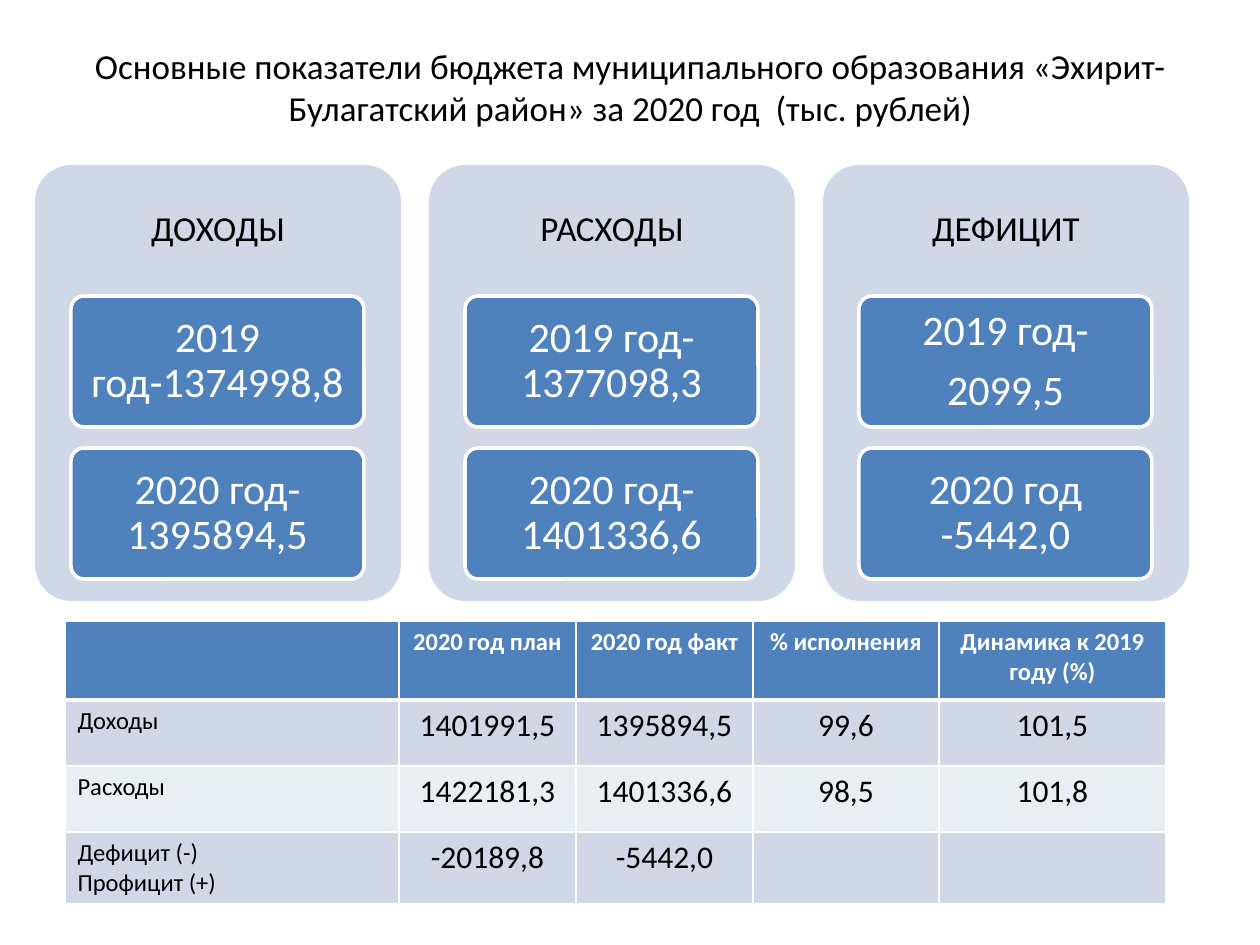
import pptx
import pptx.util
from lxml import etree
from pptx.dml.color import RGBColor
from pptx.enum.shapes import MSO_SHAPE
from pptx.enum.text import MSO_ANCHOR, PP_ALIGN
from pptx.oxml.ns import qn

PX = 914400 / 126
FONT = "Calibri"
BLACK = RGBColor(0x00, 0x00, 0x00)
WHITE = RGBColor(0xFF, 0xFF, 0xFF)
BLUE = RGBColor(0x4F, 0x81, 0xBD)
PALE = RGBColor(0xD0, 0xD8, 0xE8)
PALER = RGBColor(0xE9, 0xED, 0xF4)

TITLE = ("Основные показатели бюджета муниципального образования "
         "«Эхирит-Булагатский район» за 2020 год  (тыс. рублей)")
PANELS = [
    ("ДОХОДЫ", [["2019 год-1374998,8"], ["2020 год- 1395894,5"]]),
    ("РАСХОДЫ", [["2019 год- 1377098,3"], ["2020 год- 1401336,6"]]),
    ("ДЕФИЦИТ", [["2019 год-", "2099,5"], ["2020 год -5442,0"]]),
]
COLUMNS = [334, 177, 177, 186, 227]
ROWS = [79, 66, 66, 72]
TABLE = [
    ["", "2020 год план", "2020 год факт", "% исполнения",
     "Динамика к 2019 году (%)"],
    ["Доходы", "1401991,5", "1395894,5", "99,6", "101,5"],
    ["Расходы", "1422181,3", "1401336,6", "98,5", "101,8"],
    ["Дефицит (-)\nПрофицит (+)", "-20189,8", "-5442,0", "", ""],
]


def px(n):
    return pptx.util.Emu(round(n * PX))


def box(*lengths):
    return [px(n) for n in lengths]


def set_attrs(obj, values):
    for name, value in values.items():
        setattr(obj, name, value)


def write(tf, lines, size, color, align=PP_ALIGN.CENTER, bold=False, **spacing):
    tf.word_wrap = True
    for i, line in enumerate(lines):
        p = tf.paragraphs[0] if i == 0 else tf.add_paragraph()
        set_attrs(p, {"alignment": align, **spacing})
        r = p.add_run()
        r.text = line
        set_attrs(r.font, {"name": FONT, "size": pptx.util.Pt(size), "bold": bold})
        r.font.color.rgb = color


def write_centered(tf, lines, size, color, inset_x, inset_y):
    set_attrs(tf, {"vertical_anchor": MSO_ANCHOR.MIDDLE,
                   "margin_left": px(inset_x), "margin_right": px(inset_x),
                   "margin_top": px(inset_y), "margin_bottom": px(inset_y)})
    write(tf, lines, size, color, line_spacing=0.9,
          space_after=pptx.util.Pt(size * 0.35))


def add_title(s):
    title = s.shapes.title
    set_attrs(title, dict(zip(("left", "top", "width", "height"),
                              box(64, 38, 1133, 97))))
    title.text_frame.vertical_anchor = MSO_ANCHOR.MIDDLE
    write(title.text_frame, [TITLE], 20, BLACK)


def add_round_rect(s, x, y, w, h, fill):
    sp = s.shapes.add_shape(MSO_SHAPE.ROUNDED_RECTANGLE, *box(x, y, w, h))
    sp.adjustments[0] = 0.1
    sp.shadow.inherit = False
    sp.fill.solid()
    sp.fill.fore_color.rgb = fill
    sp.line.fill.background()
    return sp


def add_tile(s, x, y, lines):
    sp = add_round_rect(s, x, y, 293, 131, BLUE)
    sp.line.color.rgb = WHITE
    sp.line.width = pptx.util.Pt(2)
    write_centered(sp.text_frame, lines, 24, WHITE, 8, 6)


def add_panel(s, x, heading, tiles):
    y = 165
    add_round_rect(s, x, y, 366, 436, PALE)
    tb = s.shapes.add_textbox(*box(x, y, 366, 131))
    write_centered(tb.text_frame, [heading], 20, BLACK, 10, 10)
    for i, lines in enumerate(tiles):
        add_tile(s, x + 36, y + 131 + i * 152, lines)


def set_borders(cell, **widths):
    tcPr = cell._tc.get_or_add_tcPr()
    for side in "LRTB":
        ln = etree.SubElement(tcPr, qn(f"a:ln{side}"),
                              w=str(pptx.util.Pt(widths.get(side, 1))))
        fill = etree.SubElement(ln, qn("a:solidFill"))
        etree.SubElement(fill, qn("a:srgbClr"), val=str(WHITE))


def fill_cell(cell, row, col, text):
    # A thicker rule separates the header from the body
    set_borders(cell, **{0: {"B": 3}, 1: {"T": 3}}.get(row, {}))
    cell.fill.solid()
    cell.fill.fore_color.rgb = BLUE if row == 0 else PALE if row % 2 else PALER
    if not text:
        return
    header, label = row == 0, col == 0
    write(cell.text_frame, text.split("\n"),
          14 if header or label else 18,
          WHITE if header else BLACK,
          PP_ALIGN.LEFT if label else PP_ALIGN.CENTER, header)


def add_budget_table(s):
    frame = s.shapes.add_table(len(ROWS), len(COLUMNS),
                               *box(65, 621, sum(COLUMNS), sum(ROWS)))
    table = frame.table
    for column, width in zip(table.columns, COLUMNS):
        column.width = px(width)
    for r, (height, texts) in enumerate(zip(ROWS, TABLE)):
        table.rows[r].height = px(height)
        for c, text in enumerate(texts):
            fill_cell(table.cell(r, c), r, c, text)


def main():
    prs = pptx.Presentation()
    prs.slide_width, prs.slide_height = box(1260, 945)
    s = prs.slides.add_slide(prs.slide_layouts[5])
    # Title
    add_title(s)
    # Income, spending and deficit panels
    for i, (heading, tiles) in enumerate(PANELS):
        add_panel(s, 35 + i * 394, heading, tiles)
    # Plan and actual figures
    add_budget_table(s)
    prs.save("out.pptx")


if __name__ == "__main__":
    main()
